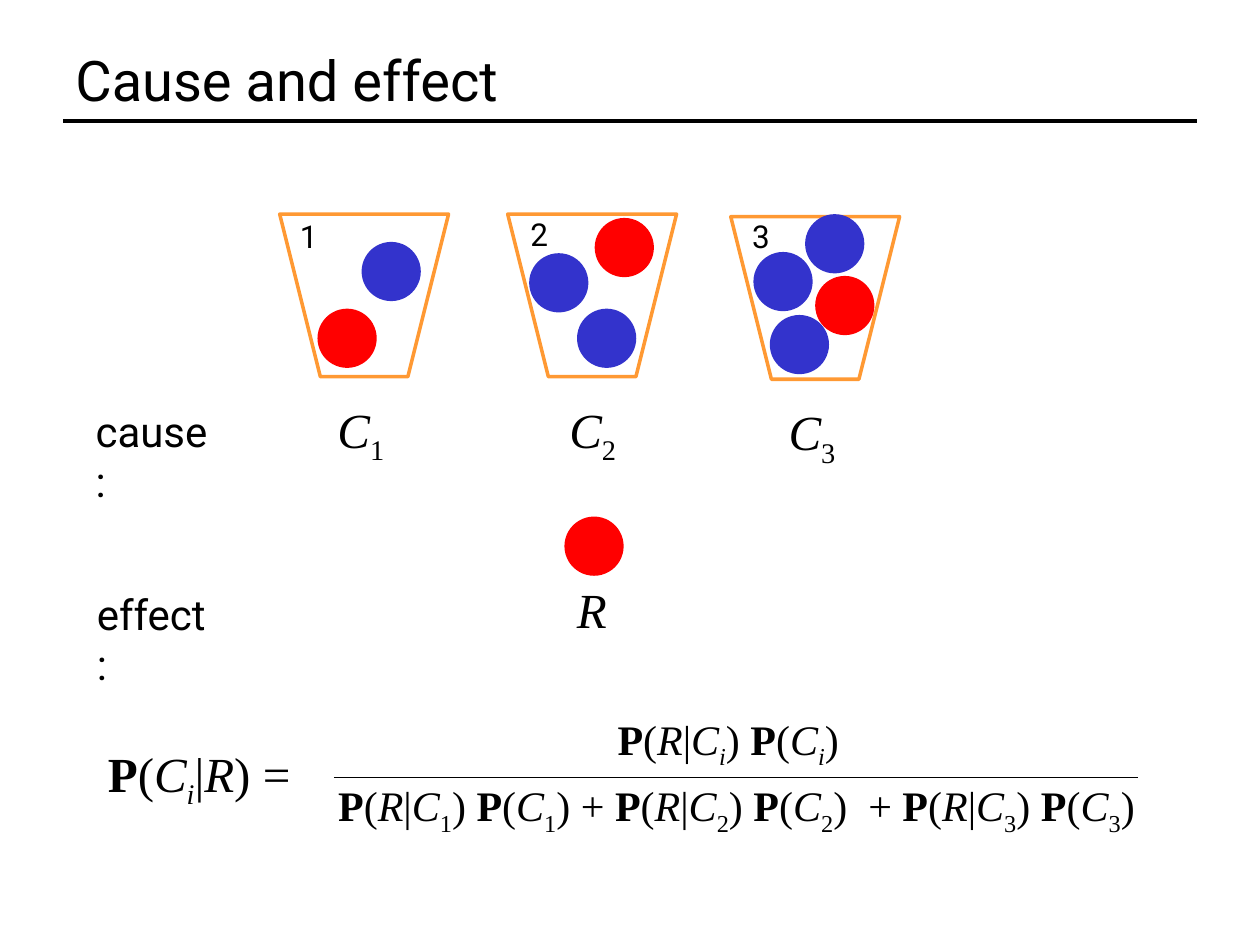
from itertools import groupby

from lxml import etree
from pptx import Presentation
from pptx.dml.color import RGBColor
from pptx.enum import shapes, text
from pptx.oxml.ns import qn
from pptx.util import Inches, Pt

BLACK = RGBColor(0x00, 0x00, 0x00)
RED = RGBColor(0xFF, 0x00, 0x00)
BLUE = RGBColor(0x33, 0x33, 0xCC)
ORANGE = RGBColor(0xFF, 0x99, 0x33)
SANS = "Roboto"
SERIF = "Times New Roman"
LEFT = text.PP_ALIGN.LEFT
CENTER = text.PP_ALIGN.CENTER
BALL = 0.47

prs = Presentation()
prs.slide_width = Inches(10)
prs.slide_height = Inches(7.5)
s = prs.slides.add_slide(prs.slide_layouts[6])


def add_text(x, y, w, h, size, font, align, wrap):
    tb = s.shapes.add_textbox(Inches(x), Inches(y), Inches(w), Inches(h))
    tf = tb.text_frame
    tf.word_wrap = wrap
    p = tf.paragraphs[0]
    p.alignment = align
    p.font.size = Pt(size)
    p.font.name = font
    p.font.color.rgb = BLACK
    return tf


def add_math(x, y, w, h, size, formula, align=CENTER):
    p = add_text(x, y, w, h, size, SERIF, align, False).paragraphs[0]
    for (bold, italic, sub), chars in groupby(
        formula, lambda c: (c == "P", c in "CRi", c in "i123")
    ):
        r = p.add_run()
        r.text = "".join(chars)
        r.font.bold = bold
        r.font.italic = italic
        if sub:
            r._r.get_or_add_rPr().set("baseline", "-25000")


tf = add_text(0.5, 0.3, 9, 0.66, 32, SANS, LEFT, True)
tf.vertical_anchor = text.MSO_ANCHOR.MIDDLE
tf.paragraphs[0].text = "Cause and effect"

for x1, x2, y, width in [(0.5, 9.5, 0.96, 2), (2.65, 9.03, 6.17, 0.5)]:
    line = s.shapes.add_connector(
        shapes.MSO_CONNECTOR.STRAIGHT, Inches(x1), Inches(y), Inches(x2), Inches(y)
    )
    line.line.color.rgb = BLACK
    line.line.width = Pt(width)
    etree.SubElement(line._element.spPr, qn("a:effectLst"))

for x, y in [(2.22, 1.7), (4.03, 1.7), (5.8, 1.72)]:
    sp = s.shapes.add_shape(
        shapes.MSO_SHAPE.TRAPEZOID, Inches(x), Inches(y), Inches(1.34), Inches(1.29)
    )
    sp._element.spPr.xfrm.set("flipV", "1")
    sp.shadow.inherit = False
    sp.fill.background()
    sp.line.color.rgb = ORANGE
    sp.line.width = Pt(2)

balls = [
    (RED, [(4.72, 1.73), (2.52, 2.45), (6.47, 2.19), (4.48, 4.1)]),
    (BLUE, [(4.58, 2.45), (6.39, 1.7), (5.98, 2), (6.11, 2.5), (4.2, 2.01), (2.87, 1.92)]),
]
for color, places in balls:
    for x, y in places:
        sp = s.shapes.add_shape(
            shapes.MSO_SHAPE.OVAL, Inches(x), Inches(y), Inches(BALL), Inches(BALL)
        )
        sp.shadow.inherit = False
        sp.fill.solid()
        sp.fill.fore_color.rgb = color
        sp.line.fill.background()

for number, x, y in [("1", 2.2, 1.62), ("2", 4.03, 1.61), ("3", 5.79, 1.62)]:
    sp = s.shapes.add_shape(
        shapes.MSO_SHAPE.OVAL, Inches(x), Inches(y), Inches(0.5), Inches(0.5)
    )
    sp.shadow.inherit = False
    sp.fill.background()
    sp.line.fill.background()
    tf = sp.text_frame
    tf.word_wrap = False
    tf.vertical_anchor = text.MSO_ANCHOR.MIDDLE
    p = tf.paragraphs[0]
    p.text = number
    p.alignment = CENTER
    p.font.size = Pt(18)
    p.font.name = SANS
    p.font.color.rgb = BLACK

for label, x, y in [("cause:", 0.66, 3.17), ("effect:", 0.67, 4.62)]:
    tf = add_text(x, y, 1.12, 0.5, 24, SANS, LEFT, True)
    tf.paragraphs[0].text = label

for name, x, y in [("C1", 2.58, 3.12), ("C2", 4.42, 3.12), ("C3", 6.16, 3.14), ("R", 4.48, 4.55)]:
    add_math(x, y, 0.61 if name != "R" else 0.44, 0.57, 28, name, LEFT)

add_math(0.69, 5.85, 1.78, 0.57, 28, "P(Ci|R) =")
add_math(4.78, 5.61, 2, 0.5, 24, "P(R|Ci) P(Ci)")
add_math(2.46, 6.14, 6.77, 0.5, 24, "P(R|C1) P(C1) + P(R|C2) P(C2)  + P(R|C3) P(C3)")

prs.save("out.pptx")
